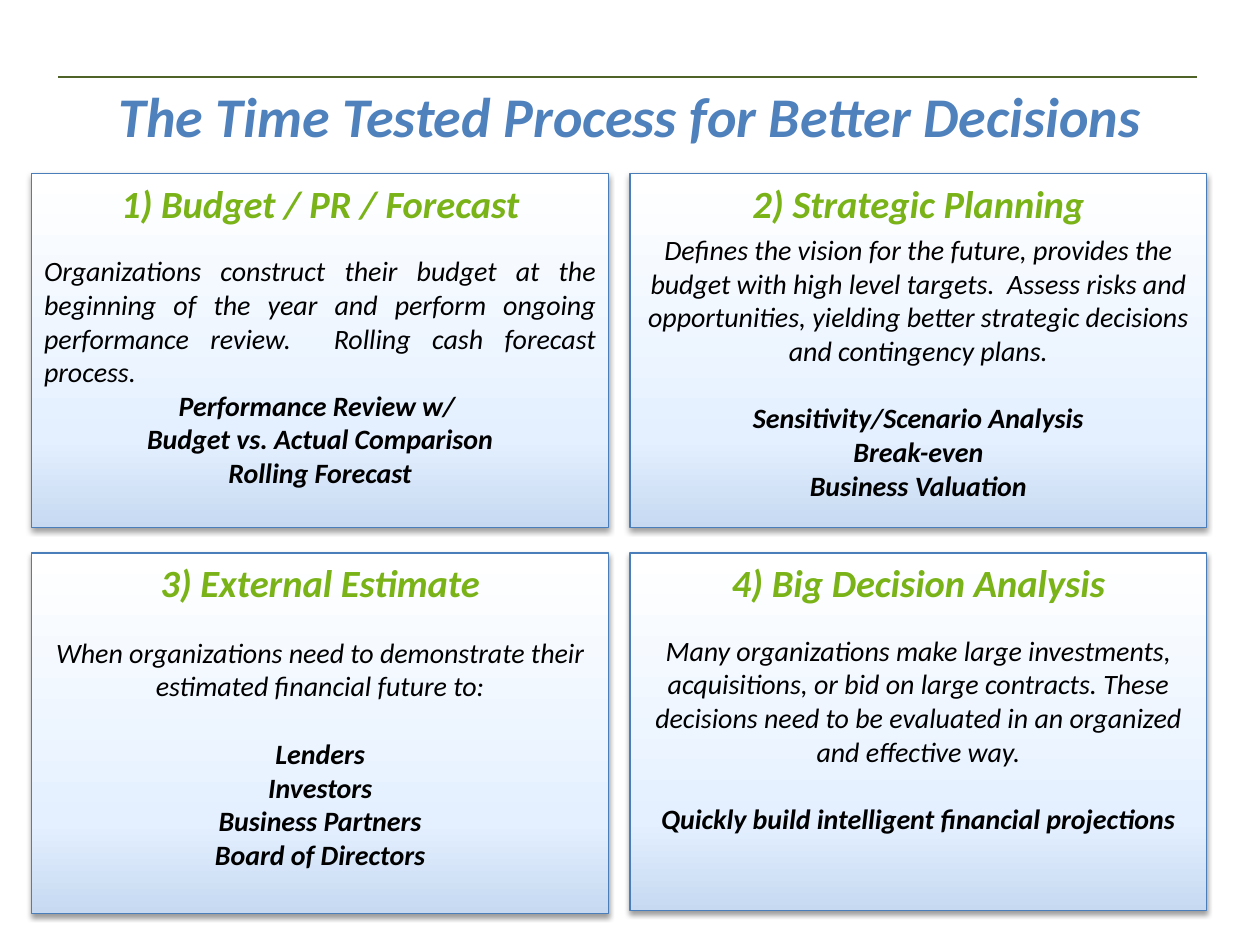
import pptx
import pptx.util
import pptx.dml.color
import pptx.enum.shapes
import pptx.enum.text
import pptx.oxml
import pptx.oxml.ns
from lxml import etree

Cm, Pt = pptx.util.Cm, pptx.util.Pt
RGB = pptx.dml.color.RGBColor.from_string
ALIGN = pptx.enum.text.PP_ALIGN
qn = pptx.oxml.ns.qn

THEME = {
    "font": "Calibri",
    "title": ("4F81BD", 32), "heading": ("79B317", 22), "body": ("000000", 16),
    "rule": "4F6228", "border": "4A7EBB",
    "gradient": [(0, "C6D9F1"), (25, "E4F0FF"), (100, "FFFFFF")],
}


def add_text(p, text, style, bold=True, align=ALIGN.CENTER):
    p.alignment = align
    r = p.add_run()
    r.text = text
    color, size = THEME[style]
    r.font.name, r.font.size = THEME["font"], Pt(size)
    r.font.bold, r.font.italic = bold, True
    r.font.color.rgb = RGB(color)


def style_card(sp):
    sp.line.color.rgb = RGB(THEME["border"])
    sp.line.width = Pt(0.75)
    # Three-stop gradient, running from bottom to top
    sp.fill.gradient()
    sp.fill.gradient_angle = 90
    stops = sp._element.spPr.find(".//" + qn("a:gsLst"))
    for old in list(stops):
        stops.remove(old)
    for pos, color in THEME["gradient"]:
        gs = etree.SubElement(stops, qn("a:gs"), pos=str(pos * 1000))
        etree.SubElement(gs, qn("a:srgbClr"), val=color)
    # Soft shadow below
    sp.shadow.inherit = False
    effects = sp._element.spPr.find(qn("a:effectLst"))
    shadow = etree.SubElement(effects, qn("a:outerShdw"), blurRad="40000", dist="20000",
                              dir="5400000", rotWithShape="0")
    black = etree.SubElement(shadow, qn("a:srgbClr"), val="000000")
    etree.SubElement(black, qn("a:alpha"), val="38000")


prs = pptx.Presentation()
prs.slide_width, prs.slide_height = Cm(25.4), Cm(19.05)
s = prs.slides.add_slide(prs.slide_layouts[6])

# Rule above the title
rule = s.shapes.add_connector(pptx.enum.shapes.MSO_CONNECTOR.STRAIGHT,
                              Cm(1.17), Cm(1.55), Cm(24.13), Cm(1.55))
rule.line.color.rgb = RGB(THEME["rule"])
rule.line.width = Pt(1)
etree.SubElement(rule._element.spPr, qn("a:effectLst"))

# Title
tf = s.shapes.add_textbox(0, Cm(1.52), Cm(25.4), Cm(1.6)).text_frame
tf.word_wrap = True
tf.vertical_anchor = pptx.enum.text.MSO_ANCHOR.MIDDLE
add_text(tf.paragraphs[0], "The Time Tested Process for Better Decisions", "title")

# Cards: heading, gap below it, body, body alignment, gap below it, bold lines, height
cards = [
    ("1) Budget / PR / Forecast", 16,
     "Organizations construct their budget at the beginning of the year and perform "
     "ongoing performance review.  Rolling cash forecast process.",
     ALIGN.JUSTIFY, 0,
     ["Performance Review w/ ", "Budget vs. Actual Comparison", "Rolling Forecast"], 7.14),
    ("2) Strategic Planning", 3.7,
     "Defines the vision for the future, provides the budget with high level targets.  "
     "Assess risks and opportunities, yielding better strategic decisions and "
     "contingency plans.",
     ALIGN.CENTER, 19.5,
     ["Sensitivity/Scenario Analysis", "Break-even", "Business Valuation"], 7.14),
    ("3) External Estimate", 17,
     "When organizations need to demonstrate their estimated financial future to:",
     ALIGN.CENTER, 19.5,
     ["Lenders", "Investors", "Business Partners", "Board of Directors"], 7.26),
    ("4) Big Decision Analysis", 16,
     "Many organizations make large investments, acquisitions, or bid on large "
     "contracts. These decisions need to be evaluated in an organized and effective way.",
     ALIGN.CENTER, 19.5,
     ["Quickly build intelligent financial projections"], 7.21),
]
for i, (heading, head_gap, body, align, body_gap, lines, height) in enumerate(cards):
    row, col = divmod(i, 2)
    sp = s.shapes.add_shape(pptx.enum.shapes.MSO_SHAPE.RECTANGLE,
                            Cm(0.64 + 12.06 * col), Cm(3.5 + 7.65 * row),
                            Cm(11.63), Cm(height))
    style_card(sp)
    tf = sp.text_frame
    tf.word_wrap = True
    tf.vertical_anchor = pptx.enum.text.MSO_ANCHOR.TOP
    p = tf.paragraphs[0]
    add_text(p, heading, "heading")
    p.space_after = Pt(head_gap)
    p = tf.add_paragraph()
    add_text(p, body, "body", bold=False, align=align)
    p.space_after = Pt(body_gap)
    for line in lines:
        add_text(tf.add_paragraph(), line, "body")

prs.save("out.pptx")
